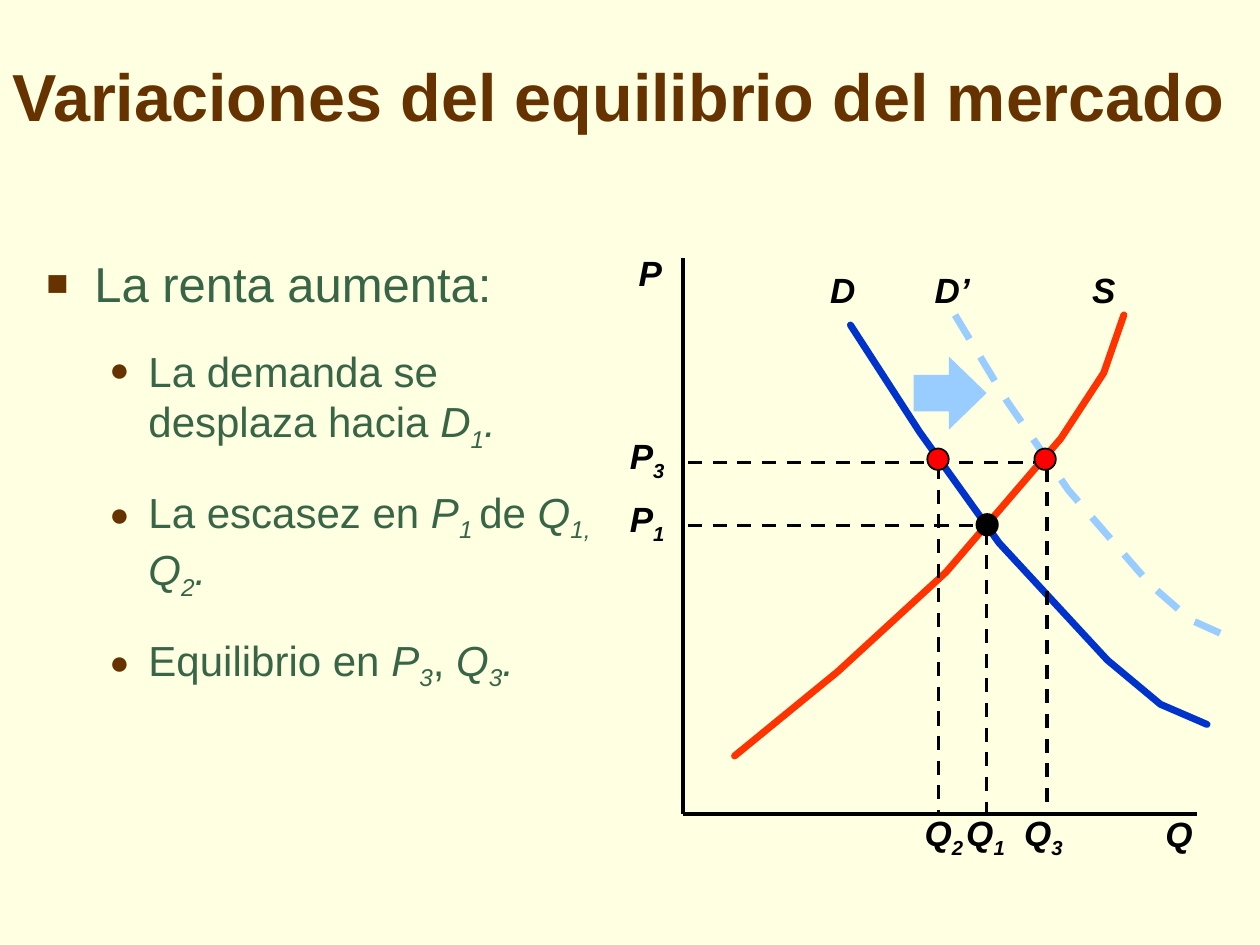
from lxml.etree import SubElement
from pptx import Presentation
from pptx.dml.color import RGBColor
from pptx.enum.dml import MSO_LINE
from pptx.enum.shapes import MSO_CONNECTOR, MSO_SHAPE
from pptx.enum.text import MSO_ANCHOR, MSO_AUTO_SIZE
from pptx.oxml.ns import qn
from pptx.util import Inches, Pt

COLUMNS, ROWS = 100, 75
BROWN, GREEN, BLACK = "663300", "376546", "000000"
RED, SKY, ORANGE, BLUE = "FF0000", "99CCFF", "FF3300", "0033CC"


def color(value):
    return RGBColor.from_string(value)


class MarketSlide:
    font = "Arial"

    def __init__(self, deck, background):
        self.column = deck.slide_width / COLUMNS
        self.row = deck.slide_height / ROWS
        self.slide = deck.slides.add_slide(deck.slide_layouts[6])
        self.shapes = self.slide.shapes
        self.slide.background.fill.solid()
        self.slide.background.fill.fore_color.rgb = color(background)

    def place(self, *lengths):
        units = (self.column, self.row) * 2
        return [round(length * unit) for length, unit in zip(lengths, units)]

    def stroke(self, line, hue, width, dashed=False):
        line.color.rgb = color(hue)
        line.width = Pt(width)
        if dashed:
            line.dash_style = MSO_LINE.DASH

    def add_runs(self, paragraph, pieces, size, hue, bold=False):
        for words, style in pieces:
            run = paragraph.add_run()
            run.text = words
            font = run.font
            font.name, font.size, font.bold = self.font, Pt(size), bold
            font.italic = "i" in style
            font.color.rgb = color(hue)
            if "s" in style:
                run._r.get_or_add_rPr().set("baseline", "-25000")

    def textbox(self, box, wrap=True):
        frame = self.shapes.add_textbox(*self.place(*box)).text_frame
        frame.word_wrap = wrap
        return frame

    def title(self, box, words):
        frame = self.textbox(box)
        frame.vertical_anchor = MSO_ANCHOR.BOTTOM
        self.add_runs(frame.paragraphs[0], [(words, "")], 38, BROWN, True)

    def label(self, left, top, width, letter, index=""):
        frame = self.textbox((left, top, width, 4.3), wrap=False)
        frame.auto_size = MSO_AUTO_SIZE.SHAPE_TO_FIT_TEXT
        pieces = [(letter, "i")] + ([(index, "is")] if index else [])
        self.add_runs(frame.paragraphs[0], pieces, 20, BLACK, True)

    def bullets(self, box, heading, points):
        frame = self.textbox(box)
        self.bullet(frame.paragraphs[0], heading, 28, "■", 75, 0.38, 0.38)
        for point in points:
            paragraph = frame.add_paragraph()
            paragraph.level = 1
            paragraph.space_before = Pt(19)
            self.bullet(paragraph, point, 24, "●", 80, 0.81, 0.31)

    def bullet(self, paragraph, pieces, size, mark, percent, margin, hang):
        properties = paragraph._p.get_or_add_pPr()
        properties.set("marL", str(Inches(margin)))
        properties.set("indent", str(-Inches(hang)))
        hue = SubElement(properties, qn("a:buClr"))
        SubElement(hue, qn("a:srgbClr"), val=BROWN)
        SubElement(properties, qn("a:buSzPct"), val=str(percent * 1000))
        SubElement(properties, qn("a:buFont"), typeface=self.font)
        SubElement(properties, qn("a:buChar"), char=mark)
        self.add_runs(paragraph, pieces, size, GREEN)

    def curve(self, points, hue, dashed=False):
        start, *rest = [self.place(*point) for point in points]
        builder = self.shapes.build_freeform(*start)
        builder.add_line_segments(rest, close=False)
        outline = builder.convert_to_shape()
        outline.shadow.inherit = False
        outline.fill.background()
        self.stroke(outline.line, hue, 4, dashed)
        if not dashed:
            outline._element.spPr.find(qn("a:ln")).set("cap", "rnd")

    def line(self, start, end, dashed=False):
        ends = self.place(*start, *end)
        connector = self.shapes.add_connector(MSO_CONNECTOR.STRAIGHT, *ends)
        self.stroke(connector.line, BLACK, 2, dashed)
        SubElement(connector._element.spPr, qn("a:effectLst"))

    def preset(self, kind, box, hue):
        shape = self.shapes.add_shape(kind, *self.place(*box))
        shape.shadow.inherit = False
        shape.fill.solid()
        shape.fill.fore_color.rgb = color(hue)
        return shape

    def shift_arrow(self, box):
        arrow = self.preset(MSO_SHAPE.RIGHT_ARROW, box, SKY)
        arrow.adjustments[1] = 0.515
        arrow.line.fill.background()

    def dot(self, x, y, hue):
        marker = self.preset(MSO_SHAPE.OVAL, (x - 0.85, y - 0.85, 1.7, 1.7), hue)
        self.stroke(marker.line, BLACK, 1)


def main():
    deck = Presentation()
    deck.slide_width, deck.slide_height = Inches(10), Inches(7.5)
    market = MarketSlide(deck, "FFFFE1")

    new_demand = [(75.8, 25), (79.9, 31.8), (84.8, 38.9),
                  (91.3, 46.4), (94.5, 49.2), (97.4, 50.5)]
    supply = [(58.3, 60), (66.5, 53.3), (75.1, 45.4),
              (84.2, 34.8), (87.6, 29.6), (89.2, 25)]
    demand = [(67.5, 25.8), (73, 34.3), (79.3, 43.1),
              (87.9, 52.4), (92.1, 55.9), (95.8, 57.5)]
    market.curve(new_demand, SKY, dashed=True)
    market.shift_arrow((72.5, 28.3, 5.8, 5.8))
    market.curve(supply, ORANGE)
    market.curve(demand, BLUE)
    for left, width, name in [(73.2, 4.8, "D’"), (85.7, 3.8, "S"), (64.9, 4, "D")]:
        market.label(left, 20.8, width, name)

    axis, base = 54.2, 64.6
    market.line((axis, 20.5), (axis, base))
    market.line((axis, base), (95, base))
    market.label(49.7, 19.5, 3.8, "P")
    market.label(91.5, 64, 4.1, "Q")

    for price, end, index in [(36.7, 82.1, "3"), (41.7, 78.8, "1")]:
        market.line((axis + 0.4, price), (end, price), dashed=True)
        market.label(49, price - 2.7, 4.8, "P", index)
    quantities = [(83.1, 37.1, 64.1, 80.3, "3"),
                  (74.5, 36.9, base, 72.4, "2"),
                  (78.3, 42.1, base, 75.7, "1")]
    for quantity, top, bottom, left, index in quantities:
        market.line((quantity, top), (quantity, bottom), dashed=True)
        market.label(left, 63.9, 5.1, "Q", index)
    for x, y, hue in [(82.95, 36.45, RED), (74.45, 36.45, RED), (78.35, 41.65, BLACK)]:
        market.dot(x, y, hue)

    market.bullets((2.7, 19.6, 47.1, 45), [("La renta aumenta:", "")], [
        [("La demanda se desplaza hacia ", ""), ("D", "i"), ("1", "is"), (".", "i")],
        [("La escasez en ", ""), ("P", "i"), ("1 ", "is"), ("de ", ""), ("Q", "i"),
         ("1, ", "is"), ("Q", "i"), ("2", "is"), (".", "i")],
        [("Equilibrio en ", ""), ("P", "i"), ("3", "is"), (", ", ""),
         ("Q", "i"), ("3", "is"), (".", "i")],
    ])
    market.title((0, 3.3, 100, 7.9), "Variaciones del equilibrio del mercado")
    deck.save("out.pptx")


if __name__ == "__main__":
    main()
